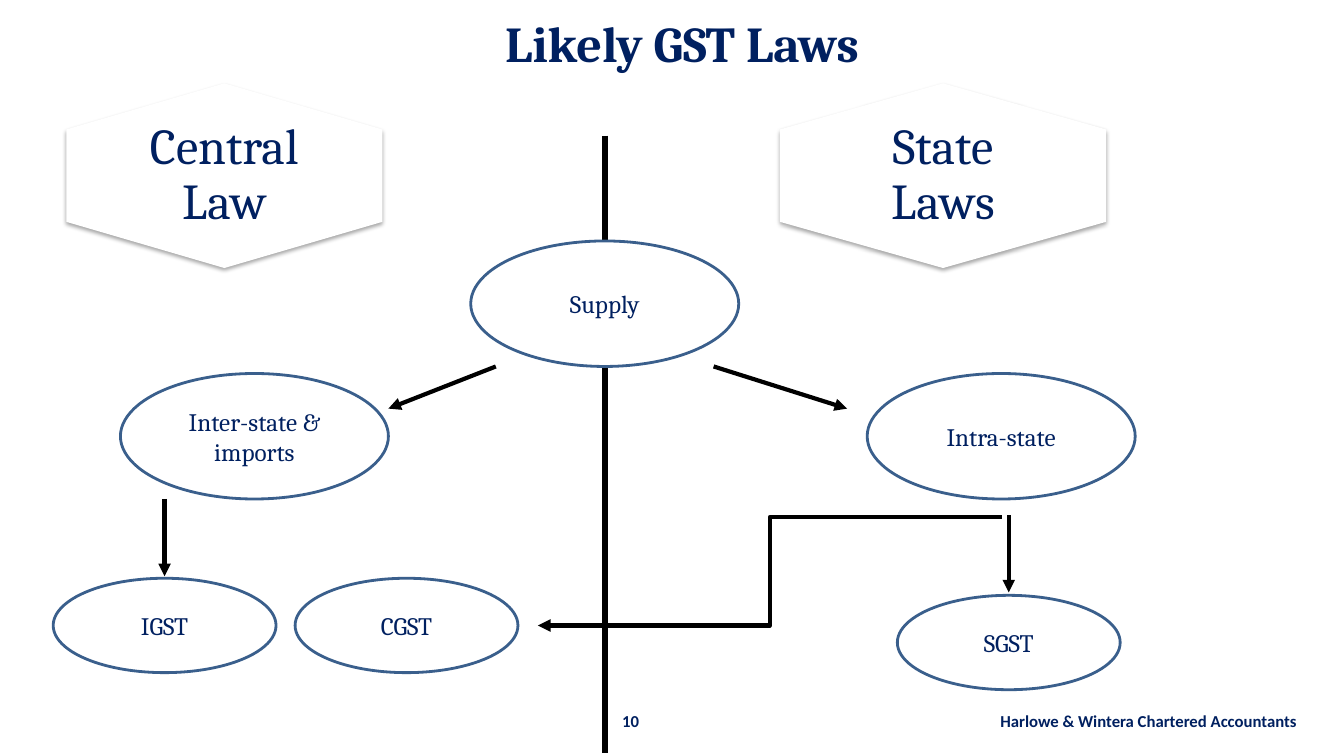
from lxml import etree
from pptx import Presentation
from pptx.dml.color import RGBColor
from pptx.enum.shapes import MSO_CONNECTOR, MSO_SHAPE
from pptx.enum.text import MSO_ANCHOR, PP_ALIGN
from pptx.oxml import parse_xml
from pptx.oxml.ns import nsdecls, qn
from pptx.util import Inches, Pt

NAVY = RGBColor(0x00, 0x20, 0x60)
OUTLINE = RGBColor(0x3A, 0x5F, 0x8C)
WHITE = RGBColor(0xFF, 0xFF, 0xFF)
BLACK = RGBColor(0x00, 0x00, 0x00)
HEXAGON, OVAL = MSO_SHAPE.HEXAGON, MSO_SHAPE.OVAL
STRAIGHT, ELBOW = MSO_CONNECTOR.STRAIGHT, MSO_CONNECTOR.ELBOW
CENTER, LEFT, RIGHT = PP_ALIGN.CENTER, PP_ALIGN.LEFT, PP_ALIGN.RIGHT
TOP, MIDDLE = MSO_ANCHOR.TOP, MSO_ANCHOR.MIDDLE

SLIDE_W, SLIDE_H = 13.39, 7.5
LARGE = (2.67, 1.25)
SMALL = (2.22, 0.94)
DIVIDER_X = 6.03
HEXAGON_H = 1.84


def write(frame, text, size, font="Cambria", bold=False, align=CENTER, anchor=MIDDLE):
    frame.word_wrap = True
    frame.vertical_anchor = anchor
    paragraph = frame.paragraphs[0]
    paragraph.alignment = align
    run = paragraph.add_run()
    run.text = text
    run.font.size = Pt(size)
    run.font.name = font
    run.font.bold = bold
    run.font.color.rgb = NAVY
    return paragraph


def add_label(slide, box, text, size, **style):
    label = slide.shapes.add_textbox(*map(Inches, box))
    return write(label.text_frame, text, size, **style)


def add_law(slide, box, text):
    left, top, width, height = box
    hexagon = slide.shapes.add_shape(
        HEXAGON,
        Inches(left + (width - height) / 2), Inches(top + (height - width) / 2),
        Inches(height), Inches(width))
    hexagon.rotation = 90
    hexagon.adjustments[0] = 0.25
    hexagon.fill.solid()
    hexagon.fill.fore_color.rgb = WHITE
    hexagon.line.fill.background()
    hexagon.shadow.inherit = False
    effects = hexagon._element.spPr.find(qn("a:effectLst"))
    effects.append(parse_xml(
        f'<a:outerShdw {nsdecls("a")} blurRad="{Pt(3.1)}" dist="{Pt(1.8)}" '
        'dir="5400000" rotWithShape="0"><a:srgbClr val="000000">'
        '<a:alpha val="35000"/></a:srgbClr></a:outerShdw>'))
    label_w, label_h = 1.9, 1.23
    label_box = (left + (width - label_w) / 2, top + (height - label_h) / 2,
                 label_w, label_h)
    add_label(slide, label_box, text, 36).line_spacing = 0.9


def add_node(slide, left, top, size, text):
    node = slide.shapes.add_shape(OVAL, *map(Inches, (left, top, *size)))
    node.shadow.inherit = False
    node.fill.solid()
    node.fill.fore_color.rgb = WHITE
    node.line.color.rgb = OUTLINE
    node.line.width = Pt(2)
    write(node.text_frame, text, 18)


def add_link(slide, start, end, kind=STRAIGHT, weight=3, arrow=True):
    link = slide.shapes.add_connector(kind, *map(Inches, (*start, *end)))
    link.line.color.rgb = BLACK
    link.line.width = Pt(weight)
    if arrow:
        etree.SubElement(link.line._get_or_add_ln(), qn("a:tailEnd"), type="triangle")
    etree.SubElement(link._element.spPr, qn("a:effectLst"))


def add_supply_tree(slide, left, top):
    links = [
        ((4.41, 1.25), (3.34, 1.67), STRAIGHT),
        ((6.58, 1.25), (7.91, 1.67), STRAIGHT),
        ((1.11, 2.57), (1.11, 3.34), STRAIGHT),
        ((9.45, 2.75), (4.83, 3.83), ELBOW),
        ((9.52, 2.73), (9.52, 3.5), STRAIGHT),
    ]
    for (x1, y1), (x2, y2), kind in links:
        add_link(slide, (left + x1, top + y1), (left + x2, top + y2), kind)
    nodes = [
        (4.16, 0, LARGE, "Supply"),
        (0.67, 1.32, LARGE, "Inter-state & imports"),
        (8.11, 1.32, LARGE, "Intra-state"),
        (0, 3.36, SMALL, "IGST"),
        (2.41, 3.36, SMALL, "CGST"),
        (8.41, 3.53, SMALL, "SGST"),
    ]
    for x, y, size, text in nodes:
        add_node(slide, left + x, top + y, size, text)


def add_footer(slide, left, top, width, height):
    number_w = 1
    style = {"font": "Calibri", "bold": True, "anchor": TOP}
    add_label(slide, (left, top, number_w, height), "10", 12, align=LEFT, **style)
    add_label(slide, (left + number_w, top, width - number_w, height),
              "Harlowe & Wintera Chartered Accountants", 12, align=RIGHT, **style)


def build_gst_laws(prs):
    slide = prs.slides.add_slide(prs.slide_layouts[6])
    add_label(slide, (0.2, 0.07, SLIDE_W - 0.2, 0.71), "Likely GST Laws", 36,
              bold=True, anchor=TOP)
    add_law(slide, (0.66, 0.83, 3.15, HEXAGON_H), "Central Law")
    add_law(slide, (7.77, 0.83, 3.25, HEXAGON_H), "State Laws")
    add_link(slide, (DIVIDER_X, 1.35), (DIVIDER_X, SLIDE_H), weight=4.5, arrow=False)
    add_supply_tree(slide, 0.53, 2.4)
    add_footer(slide, 6.1, 7.03, 6.92, 0.4)


def main():
    prs = Presentation()
    prs.slide_width, prs.slide_height = Inches(SLIDE_W), Inches(SLIDE_H)
    build_gst_laws(prs)
    prs.save("out.pptx")


if __name__ == "__main__":
    main()
